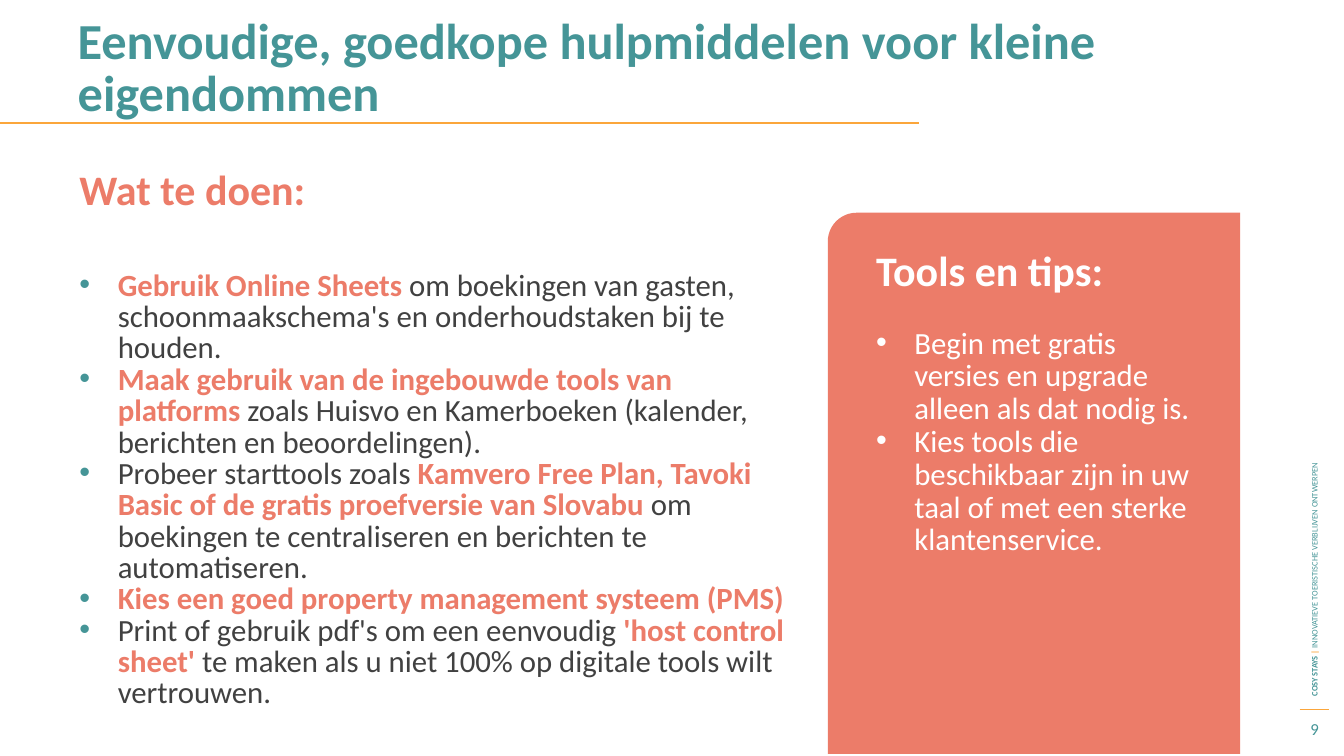
from dataclasses import dataclass

from lxml import etree
from pptx import Presentation
from pptx.dml.color import RGBColor
from pptx.enum.shapes import MSO_CONNECTOR, MSO_SHAPE
from pptx.enum.text import MSO_ANCHOR, MSO_AUTO_SIZE, PP_ALIGN
from pptx.oxml.ns import qn
from pptx.util import Inches, Pt

STRAIGHT = MSO_CONNECTOR.STRAIGHT
ROUND_CORNER = MSO_SHAPE.ROUND_1_RECTANGLE
TOP, MIDDLE = MSO_ANCHOR.TOP, MSO_ANCHOR.MIDDLE
LEFT, CENTER = PP_ALIGN.LEFT, PP_ALIGN.CENTER
NO_AUTOFIT = MSO_AUTO_SIZE.NONE


@dataclass(frozen=True)
class Theme:
    font: str = "Calibri"
    teal: str = "459597"
    coral: str = "EC7C69"
    orange: str = "FBA63B"
    dark: str = "414141"
    white: str = "FFFFFF"
    title: int = 36
    heading: int = 30
    body: int = 22
    page_number: int = 12
    footer: int = 6


THEME = Theme()


def write_paragraph(frame, text, *, size, color, accent=None, bold=False, align=LEFT,
                    spacing=None, before=0, bullet=None):
    """Add a paragraph; stretches of text between asterisks are bold in the accent colour."""
    paragraph = frame.paragraphs[0] if not frame.text else frame.add_paragraph()
    if bullet:
        properties = paragraph._p.get_or_add_pPr()
        properties.set("marL", str(Inches(0.38)))
        properties.set("indent", str(Inches(-0.38)))
        bullet_color = etree.SubElement(properties, qn("a:buClr"))
        etree.SubElement(bullet_color, qn("a:srgbClr"), val=bullet)
        etree.SubElement(properties, qn("a:buFont"), typeface="Arial")
        etree.SubElement(properties, qn("a:buChar"), char="•")
    paragraph.alignment = align
    paragraph.space_before = Pt(before)
    if spacing:
        paragraph.line_spacing = Pt(spacing)
    for index, part in enumerate(text.split("*")):
        if not part:
            continue
        emphasised = index % 2 == 1
        run = paragraph.add_run()
        run.text = part
        run.font.name = THEME.font
        run.font.size = Pt(size)
        run.font.bold = bold or emphasised
        run.font.color.rgb = RGBColor.from_string(accent if emphasised else color)
    return paragraph


def add_text_frame(left, top, width, height, anchor=TOP, rotation=0):
    box = slide.shapes.add_textbox(Inches(left), Inches(top), Inches(width), Inches(height))
    box.rotation = rotation
    box.text_frame.word_wrap = True
    box.text_frame.vertical_anchor = anchor
    return box.text_frame


presentation = Presentation()
presentation.slide_width = Inches(13.33)
presentation.slide_height = Inches(7.5)
slide = presentation.slides.add_slide(presentation.slide_layouts[5])

# Title
title = slide.shapes.title
title.left, title.top = Inches(0.67), Inches(0.12)
title.width, title.height = Inches(12), Inches(0.88)
title.text_frame.word_wrap = True
title.text_frame.auto_size = NO_AUTOFIT
title.text_frame.vertical_anchor = TOP
write_paragraph(title.text_frame, "Eenvoudige, goedkope hulpmiddelen voor kleine eigendommen",
                size=THEME.title, color=THEME.teal, bold=True, spacing=37.2)

# Rules under the title and above the page number
for start, end, y, weight in [(0, 9.11, 1.22, 1.5), (12.89, 13.18, 7.04, 0.75)]:
    rule = slide.shapes.add_connector(STRAIGHT, Inches(start), Inches(y), Inches(end), Inches(y))
    rule.line.color.rgb = RGBColor.from_string(THEME.orange)
    rule.line.width = Pt(weight)
    etree.SubElement(rule._element.spPr, qn("a:effectLst"))

# Tips panel: a quarter turn brings the rounded corner to the top left
panel_left, panel_top, panel_width, panel_height = 8.21, 2.11, 4.09, 5.37
panel = slide.shapes.add_shape(
    ROUND_CORNER,
    Inches(panel_left + (panel_width - panel_height) / 2),
    Inches(panel_top + (panel_height - panel_width) / 2),
    Inches(panel_height), Inches(panel_width))
panel.rotation = 270
panel.adjustments[0] = 0.07
panel.shadow.inherit = False
panel.fill.solid()
panel.fill.fore_color.rgb = RGBColor.from_string(THEME.coral)
panel.line.fill.background()

# What to do
heading = add_text_frame(0.69, 1.67, 6.14, 0.88)
write_paragraph(heading, "Wat te doen:", size=THEME.heading, color=THEME.coral,
                bold=True, spacing=29)

actions = add_text_frame(0.69, 2.64, 7.27, 4)
for action in [
    "*Gebruik Online Sheets *om boekingen van gasten, schoonmaakschema's en "
    "onderhoudstaken bij te houden.",
    "*Maak gebruik van de ingebouwde tools van platforms *zoals Huisvo en Kamerboeken "
    "(kalender, berichten en beoordelingen).",
    "Probeer starttools zoals *Kamvero Free Plan, Tavoki Basic of de gratis proefversie "
    "van Slovabu *om boekingen te centraliseren en berichten te automatiseren.",
    "*Kies een goed property management systeem (PMS)*",
    "Print of gebruik pdf's om een eenvoudig *'host control sheet' *te maken als u niet "
    "100% op digitale tools wilt vertrouwen.",
]:
    write_paragraph(actions, action, size=THEME.body, color=THEME.dark, accent=THEME.coral,
                    spacing=22.4, bullet=THEME.teal)

# Tools and tips
tips = add_text_frame(8.59, 2.55, 3.45, 3.59)
write_paragraph(tips, "Tools en tips:", size=THEME.heading, color=THEME.white,
                bold=True, spacing=23.4)
for tip, before in [
    ("Begin met gratis versies en upgrade alleen als dat nodig is.", 23.4),
    ("Kies tools die beschikbaar zijn in uw taal of met een sterke klantenservice.", 0),
]:
    write_paragraph(tips, tip, size=THEME.body, color=THEME.white, spacing=23.4,
                    before=before, bullet=THEME.white)

# Side footer and page number
footer = add_text_frame(10.15, 4.02, 5.77, 0.2, anchor=MIDDLE, rotation=270)
footer_paragraph = write_paragraph(
    footer, "*COSY STAYS *| *INNOVATIEVE TOERISTISCHE VERBLIJVEN ONTWERPEN*",
    size=THEME.footer, color=THEME.orange, accent=THEME.teal)
footer_paragraph.runs[1].font.bold = True
footer_paragraph.runs[2].font.bold = False

page_number = add_text_frame(12.78, 7.06, 0.52, 0.34, anchor=MIDDLE)
write_paragraph(page_number, "9", size=THEME.page_number, color=THEME.teal, align=CENTER)

presentation.save("out.pptx")
